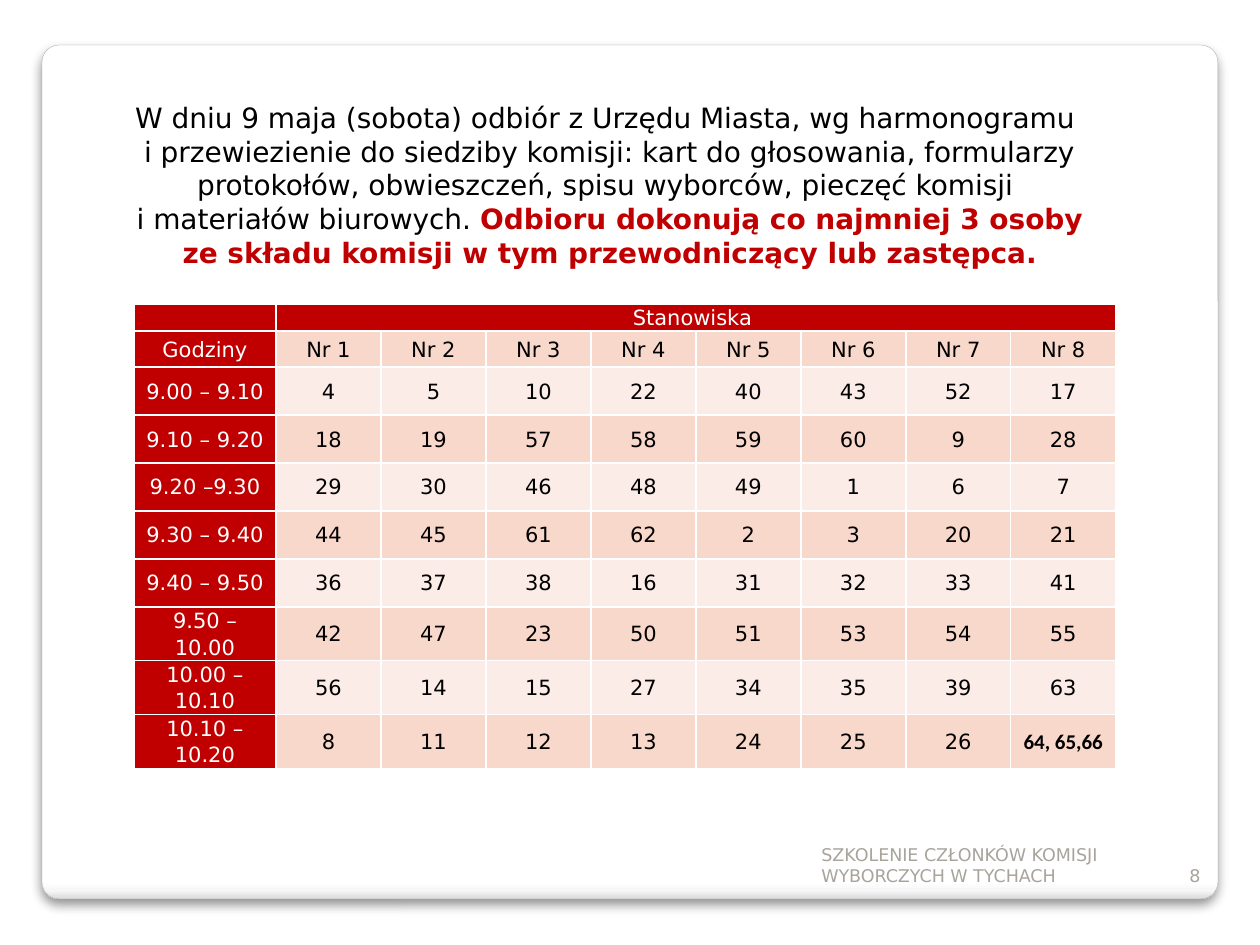
from lxml.etree import SubElement as Sub
from pptx import Presentation
from pptx.dml.color import RGBColor
from pptx.enum.shapes import MSO_SHAPE as Shape
from pptx.enum.text import MSO_ANCHOR as Anchor, PP_ALIGN as Align
from pptx.oxml import parse_xml
from pptx.oxml.ns import nsdecls, qn
from pptx.util import Pt

PX = 914400 // 126
FONT = "DejaVu Sans"
RED, WHITE, BLACK, GREY = "C00000", "FFFFFF", "000000", "A8A49B"
BANDS = ["F9D8CC", "FCECE7"]

TITLE = [
    ("W dniu 9 maja (sobota) odbiór z Urzędu Miasta, wg harmonogramu ", BLACK, False, True),
    ("i przewiezienie do siedziby komisji: kart do głosowania, formularzy "
     "protokołów, obwieszczeń, spisu wyborców, pieczęć komisji ", BLACK, False, True),
    ("i materiałów biurowych. ", BLACK, False, False),
    ("Odbioru dokonują co najmniej 3 osoby ze składu komisji "
     "w tym przewodniczący lub zastępca.", RED, True, False),
]
FOOT = "SZKOLENIE CZŁONKÓW KOMISJI WYBORCZYCH W TYCHACH"
HEAD = "Stanowiska "
ROWS = [
    ["Godziny"] + [f"Nr {n}" for n in range(1, 9)],
    ["9.00 – 9.10", 4, 5, 10, 22, 40, 43, 52, 17],
    ["9.10 – 9.20", 18, 19, 57, 58, 59, 60, 9, 28],
    ["9.20 –9.30", 29, 30, 46, 48, 49, 1, 6, 7],
    ["9.30 – 9.40", 44, 45, 61, 62, 2, 3, 20, 21],
    ["9.40 – 9.50", 36, 37, 38, 16, 31, 32, 33, 41],
    ["9.50 – 10.00", 42, 47, 23, 50, 51, 53, 54, 55],
    ["10.00 – 10.10", 56, 14, 15, 27, 34, 35, 39, 63],
    ["10.10 – 10.20", 8, 11, 12, 13, 24, 25, 26, "64, 65,66"],
]
WIDTHS = [142] + [105] * 8
HEIGHTS = [24, 36] + [48] * 8
STOPS = [(0, WHITE), (98, WHITE), (99, "F7F7F7"), (100, "DADADA")]


def color(text):
    return RGBColor.from_string(text)


def box(*at):
    return [n * PX for n in at]


def write(para, text, size, tint, bold=False, font=FONT):
    run = para.add_run()
    run.text = text
    run.font.size = Pt(size)
    run.font.name = font
    run.font.bold = bold
    run.font.color.rgb = color(tint)


def label(slide, at, align):
    frame = slide.shapes.add_textbox(*box(*at)).text_frame
    frame.word_wrap = True
    frame.vertical_anchor = Anchor.BOTTOM
    para = frame.paragraphs[0]
    para.alignment = align
    return para


def panel(slide):
    card = slide.shapes.add_shape(Shape.ROUNDED_RECTANGLE, *box(42, 45, 1176, 854))
    card.adjustments[0] = 0.02
    card.line.color.rgb = color("A4A4A4")
    card.line.width = Pt(0.16)
    card.fill.gradient()
    card.fill.gradient_angle = 270
    props = card.fill._xPr
    stops = props.find(".//" + qn("a:gsLst"))
    stops.clear()
    for pos, tint in STOPS:
        stop = Sub(stops, qn("a:gs"), pos=str(pos * 1000))
        Sub(stop, qn("a:srgbClr"), val=tint)
    props.append(parse_xml(
        f'<a:effectLst {nsdecls("a")}><a:outerShdw blurRad="76200" dist="50800" '
        'dir="5400000" algn="t" rotWithShape="0"><a:srgbClr val="000000">'
        '<a:alpha val="44000"/></a:srgbClr></a:outerShdw></a:effectLst>'))


def style(cell, fill):
    cell.margin_left = cell.margin_right = 9 * PX
    cell.margin_top = cell.margin_bottom = 0
    cell.vertical_anchor = Anchor.MIDDLE
    props = cell._tc.get_or_add_tcPr()
    for side in ("lnL", "lnR", "lnT", "lnB"):
        line = Sub(props, qn("a:" + side), w="12700")
        Sub(Sub(line, qn("a:solidFill")), qn("a:srgbClr"), val=WHITE)
    cell.fill.solid()
    cell.fill.fore_color.rgb = color(fill)


def enter(cell, text, tint, bold=False, font=FONT):
    para = cell.text_frame.paragraphs[0]
    para.alignment = Align.CENTER
    para.line_spacing = 1.07
    write(para, text, 12, tint, bold, font)


def schedule(slide):
    size = (sum(WIDTHS), sum(HEIGHTS))
    grid = slide.shapes.add_table(
        len(HEIGHTS), len(WIDTHS), *box(134, 304, *size)).table
    for col, width in zip(grid.columns, WIDTHS):
        col.width = width * PX
    for row, height in zip(grid.rows, HEIGHTS):
        row.height = height * PX
    for c in range(len(WIDTHS)):
        style(grid.cell(0, c), RED)
    blank = grid.cell(0, 0).text_frame.paragraphs[0]
    Sub(blank._p, qn("a:endParaRPr"), sz="1200")
    grid.cell(0, 1).merge(grid.cell(0, 8))
    enter(grid.cell(0, 1), HEAD, WHITE)
    for r, row in enumerate(ROWS):
        for c, item in enumerate(row):
            cell = grid.cell(r + 1, c)
            style(cell, BANDS[r % 2] if c else RED)
            multi = c > 0 and "," in str(item)
            enter(cell, str(item), BLACK if c else WHITE, multi,
                  "Calibri" if multi else FONT)


def main():
    deck = Presentation()
    deck.slide_width, deck.slide_height = box(1260, 945)
    slide = deck.slides.add_slide(deck.slide_layouts[6])
    panel(slide)
    write(label(slide, (809, 842, 341, 50), Align.LEFT), FOOT, 10, GREY)
    write(label(slide, (1150, 842, 63, 50), Align.RIGHT), "8", 10, GREY)
    title = label(slide, (104, 96, 1012, 179), Align.CENTER)
    for text, tint, bold, wrap in TITLE:
        write(title, text, 16, tint, bold)
        if wrap:
            title.add_line_break()
    schedule(slide)
    deck.save("out.pptx")


if __name__ == "__main__":
    main()
